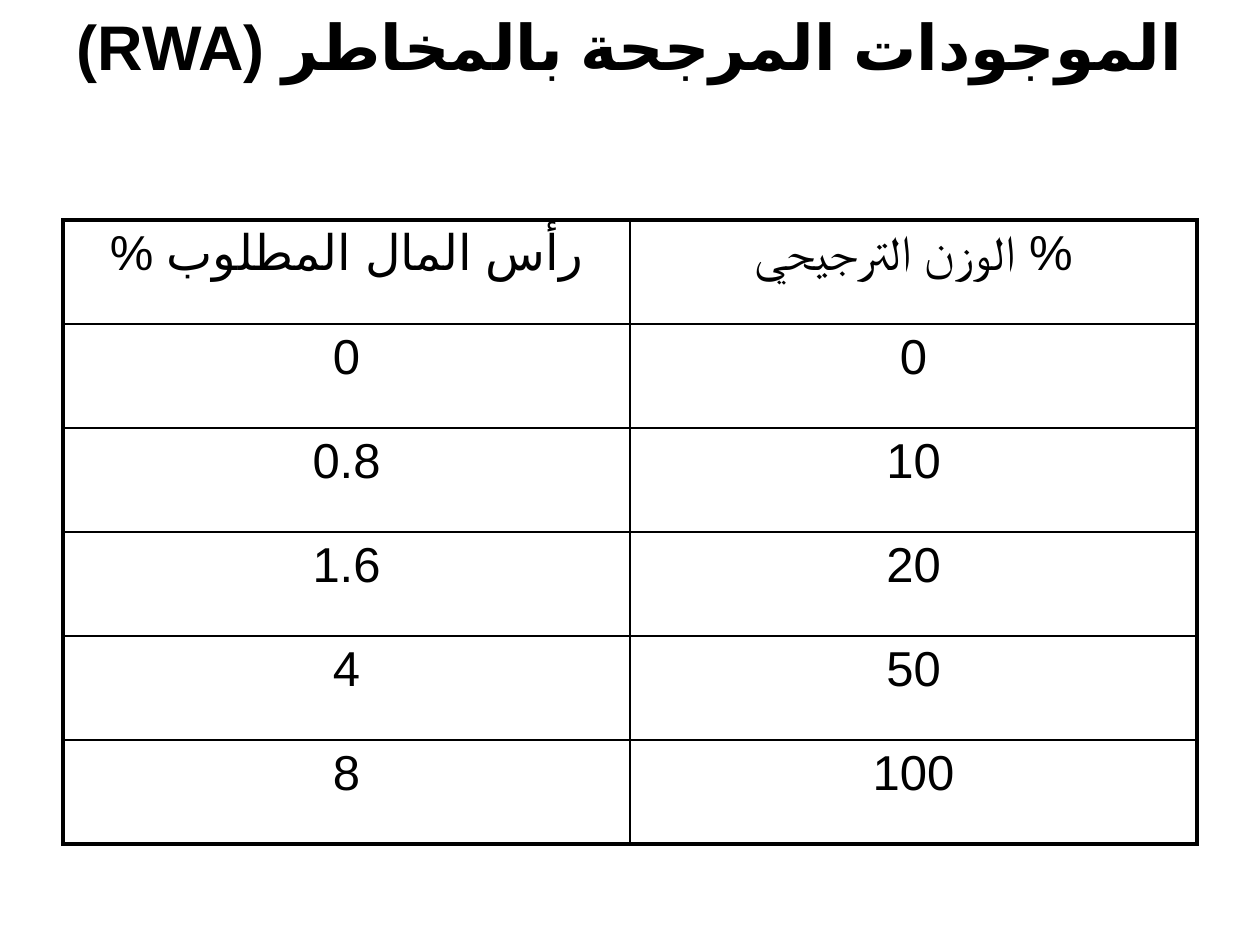
"""Build a slide with a table of risk weights and required capital."""
from dataclasses import dataclass

from lxml.etree import SubElement
from pptx import Presentation
from pptx.dml.color import RGBColor
from pptx.enum.text import MSO_ANCHOR, PP_ALIGN
from pptx.oxml.ns import qn
from pptx.util import Emu, Pt


@dataclass(frozen=True)
class Theme:
    """Colours, font and sizes in points."""
    ink: str = "000000"
    paper: str = "FFFFFF"
    font: str = "Arial"
    title_size: int = 36
    cell_size: int = 28
    thin: float = 1
    thick: float = 2.25


@dataclass(frozen=True)
class Box:
    """A rectangle in px."""
    left: int
    top: int
    width: int
    height: int


@dataclass(frozen=True)
class Row:
    """One table row, with its left cell's reading direction."""
    capital: str
    weight: str
    capital_rtl: bool = False


THEME = Theme()
PAGE = Box(0, 0, 1260, 945)
TITLE = Box(63, 38, 1134, 157)
TABLE = Box(63, 220, 1134, 624)
ROWS = [
    Row("رأس المال المطلوب %", "الوزن الترجيحي %", True),
    Row("0", "0"),
    Row("0.8", "10"),
    Row("1.6", "20"),
    Row("4", "50"),
    Row("8", "100"),
]


def px(length: int) -> Emu:
    """Turn px into EMU at 126 px to the inch."""
    return Emu(round(length * 914400 / 126))


def place(box: Box) -> tuple:
    """Give a box's left, top, width and height in EMU."""
    return px(box.left), px(box.top), px(box.width), px(box.height)


def write(frame, text: str, size: int, bold: bool = False, rtl: bool = False):
    """Write one centred paragraph and return it."""
    frame.text = text
    para = frame.paragraphs[0]
    para.alignment = PP_ALIGN.CENTER
    para._p.get_or_add_pPr().set("rtl", "1" if rtl else "0")
    for span in para.runs:
        span.font.name = THEME.font
        span.font.size = Pt(size)
        span.font.bold = bold
        span.font.color.rgb = RGBColor.from_string(THEME.ink)
        properties = span._r.get_or_add_rPr()
        properties.set("lang", "ar-SA" if rtl else "en-US")
        SubElement(properties, qn("a:cs"), typeface=THEME.font)
    return para


def add_border(cell, side: str, width: float) -> None:
    """Draw one solid border of a cell."""
    properties = cell._tc.get_or_add_tcPr()
    line = SubElement(properties, qn(f"a:ln{side}"), w=str(Pt(width)))
    fill = SubElement(line, qn("a:solidFill"))
    SubElement(fill, qn("a:srgbClr"), val=THEME.ink)


def add_title(page, text: str) -> None:
    """Fill the title placeholder, with its line near the box's top."""
    title = page.shapes.title
    title.left, title.top, title.width, title.height = place(TITLE)
    frame = title.text_frame
    frame.word_wrap = True
    frame.vertical_anchor = MSO_ANCHOR.MIDDLE
    frame.margin_top, frame.margin_bottom = px(6), px(149)
    write(frame, text, THEME.title_size, bold=True, rtl=True)


def add_table(page, rows: list[Row]) -> None:
    """Draw the table with a thick frame and thin inner lines."""
    table = page.shapes.add_table(len(rows), 2, *place(TABLE)).table
    table.first_row = table.horz_banding = False
    last = len(rows) - 1
    for index, row in enumerate(rows):
        table.rows[index].height = px(TABLE.height // len(rows))
        texts = ((row.capital, row.capital_rtl), (row.weight, False))
        for column, (text, rtl) in enumerate(texts):
            cell = table.cell(index, column)
            para = write(cell.text_frame, text, THEME.cell_size, rtl=rtl)
            para.space_before = Pt(THEME.cell_size * 0.2)
            edges = {"L": column == 0, "R": column == 1,
                     "T": index == 0, "B": index == last}
            for side, outer in edges.items():
                add_border(cell, side, THEME.thick if outer else THEME.thin)
            cell.fill.background()


def main() -> None:
    """Build and save the deck."""
    deck = Presentation()
    deck.slide_width, deck.slide_height = px(PAGE.width), px(PAGE.height)
    page = deck.slides.add_slide(deck.slide_layouts[5])
    page.background.fill.solid()
    page.background.fill.fore_color.rgb = RGBColor.from_string(THEME.paper)
    add_title(page, "الموجودات المرجحة بالمخاطر (RWA)")
    add_table(page, ROWS)
    deck.save("out.pptx")


if __name__ == "__main__":
    main()
